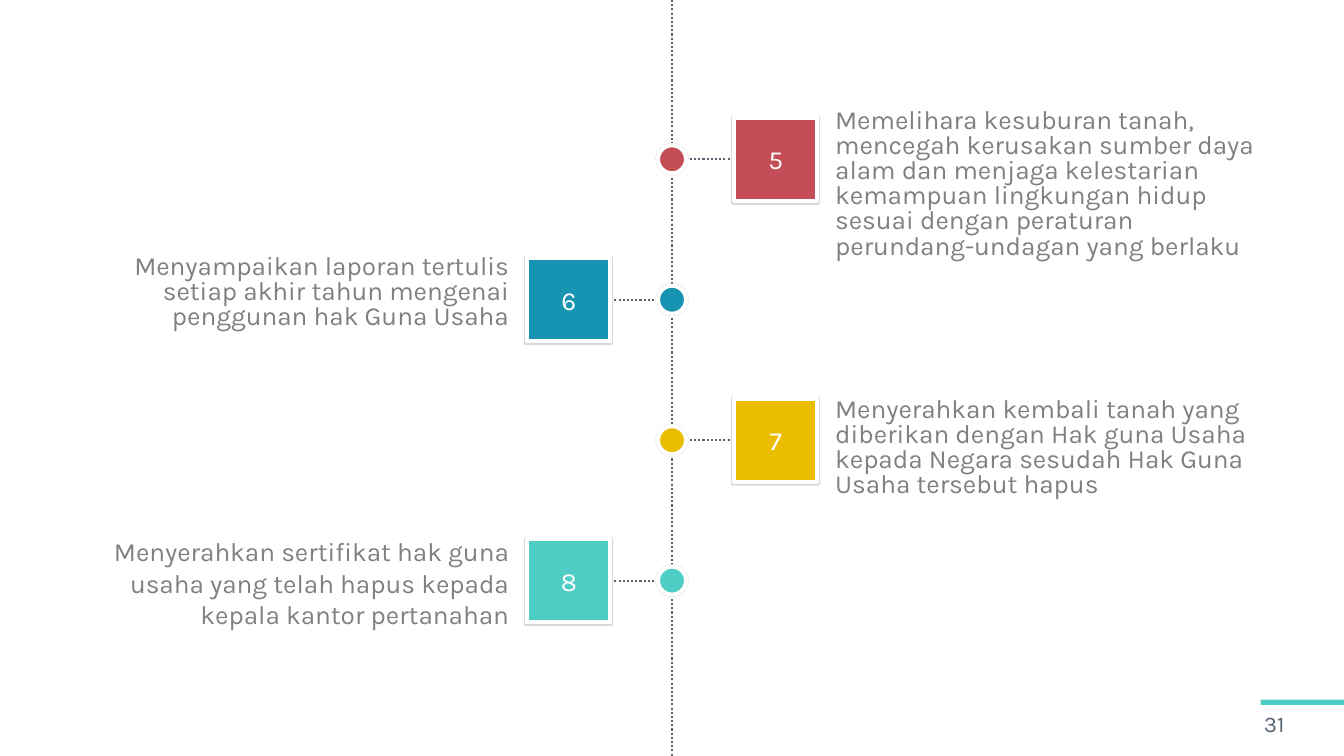
"""Build a timeline slide with duties five to eight of a land-use right holder."""

import dataclasses

import lxml.etree
import pptx
import pptx.dml.color
import pptx.enum.dml
import pptx.enum.shapes
import pptx.enum.text
import pptx.oxml.ns
import pptx.util

COLORS = {
    "red": "C54D57", "blue": "1694B2", "yellow": "EABD00", "teal": "4ECDC4",
    "slate": "556272", "grey": "808080", "white": "FFFFFF", "black": "000000",
}
FONT = "Karla"
SLIDE_WIDTH = pptx.util.Inches(20)
COLUMNS = 20
ROWS = 11.25
CELL = SLIDE_WIDTH / COLUMNS

AXIS = COLUMNS / 2
FIRST_ROW = 2.37
ROW_STEP = 2.09
DOT = 0.42
SQUARE = 1.24
SQUARE_OFFSET = 1.54
TEXT_OFFSET = 2.33

SHAPES = pptx.enum.shapes.MSO_SHAPE
ALIGN = pptx.enum.text.PP_ALIGN
ANCHOR = pptx.enum.text.MSO_ANCHOR


@dataclasses.dataclass(frozen=True)
class Area:
    """A rectangle in grid cells."""

    left: float
    top: float
    width: float
    height: float

    def lengths(self) -> list[int]:
        """Give the rectangle in slide units."""
        return [cells(value) for value in dataclasses.astuple(self)]


@dataclasses.dataclass(frozen=True)
class Duty:
    """One step of the timeline; side is 1 for right and -1 for left."""

    number: str
    text: str
    color: str
    side: int
    top: float
    width: float
    height: float
    spacing: float


DUTIES = [
    Duty("5", "Memelihara kesuburan tanah, mencegah kerusakan sumber daya alam "
         "dan menjaga kelestarian kemampuan lingkungan hidup sesuai dengan "
         "peraturan perundang-undagan yang berlaku",
         "red", 1, 1.58, 6.46, 2.29, 0.8),
    Duty("6", "Menyampaikan laporan tertulis setiap akhir tahun mengenai "
         "penggunan hak Guna Usaha",
         "blue", -1, 3.75, 6.08, 2.79, 0.8),
    Duty("7", "Menyerahkan kembali tanah yang diberikan dengan Hak guna Usaha "
         "kepada Negara sesudah Hak Guna Usaha tersebut hapus",
         "yellow", 1, 5.88, 6.46, 2.63, 0.8),
    Duty("8", "Menyerahkan sertifikat hak guna usaha yang telah hapus kepada "
         "kepala kantor pertanahan",
         "teal", -1, 7.92, 6.08, 2.81, 1.0),
]


def cells(count: float) -> int:
    """Turn a number of grid cells into slide units."""
    return round(count * CELL)


def rgb(name: str) -> pptx.dml.color.RGBColor:
    """Look up a named colour."""
    return pptx.dml.color.RGBColor.from_string(COLORS[name])


def add_effects(shape):
    """Append an effect list to a shape and return it."""
    tag = pptx.oxml.ns.qn("a:effectLst")
    return lxml.etree.SubElement(shape._element.spPr, tag)


def add_dotted_line(page, start: tuple[float, float], end: tuple[float, float]) -> None:
    """Draw a dotted line between two grid points."""
    line = page.shapes.add_connector(
        pptx.enum.shapes.MSO_CONNECTOR.STRAIGHT,
        *[cells(value) for value in (*start, *end)])
    line.line.color.rgb = rgb("slate")
    line.line.width = pptx.util.Pt(2.25)
    line.line.dash_style = pptx.enum.dml.MSO_LINE.ROUND_DOT
    add_effects(line)


def add_block(page, kind, area: Area, color: str):
    """Draw a plain filled shape."""
    shape = page.shapes.add_shape(kind, *area.lengths())
    shape.fill.solid()
    shape.fill.fore_color.rgb = rgb(color)
    shape.line.fill.background()
    shape.shadow.inherit = False
    return shape


def add_marker(page, kind, x: float, y: float, size: float, color: str,
               drop: float) -> None:
    """Draw a white-rimmed shape around a centre, with a faint shadow."""
    shape = add_block(page, kind, Area(x - size / 2, y - size / 2, size, size), color)
    shape.line.color.rgb = rgb("white")
    shape.line.width = pptx.util.Pt(4.5)
    effects = shape._element.spPr.find(pptx.oxml.ns.qn("a:effectLst"))
    shadow = lxml.etree.SubElement(
        effects, pptx.oxml.ns.qn("a:outerShdw"), dist=str(pptx.util.Pt(drop)),
        dir="5400000", sx="102000", sy="102000", algn="ctr", rotWithShape="0")
    tone = lxml.etree.SubElement(
        shadow, pptx.oxml.ns.qn("a:srgbClr"), val=COLORS["black"])
    lxml.etree.SubElement(tone, pptx.oxml.ns.qn("a:alpha"), val="15000")


def add_text(page, area: Area, text: str, size: float, color: str, align,
             anchor=ANCHOR.MIDDLE):
    """Write one paragraph in a wrapped text box and return the box."""
    box = page.shapes.add_textbox(*area.lengths())
    frame = box.text_frame
    frame.word_wrap = True
    frame.vertical_anchor = anchor
    para = frame.paragraphs[0]
    para.alignment = align
    span = para.add_run()
    span.text = text
    span.font.name = FONT
    span.font.size = pptx.util.Pt(size)
    span.font.color.rgb = rgb(color)
    return box


def add_duty(page, duty: Duty, y: float) -> None:
    """Draw the dot, link, numbered square and description of one duty."""
    square_x = AXIS + duty.side * SQUARE_OFFSET
    add_dotted_line(page, (square_x - duty.side * SQUARE / 2, y),
                    (AXIS + duty.side * DOT / 2, y))
    add_marker(page, SHAPES.RECTANGLE, square_x, y, SQUARE, duty.color, 1)
    add_marker(page, SHAPES.OVAL, AXIS, y, DOT, duty.color, 0)
    add_text(page, Area(square_x - 0.64, y - 0.41, 1.29, 0.82),
             duty.number, 28, "white", ALIGN.CENTER)
    on_right = duty.side > 0
    left = AXIS + TEXT_OFFSET if on_right else AXIS - TEXT_OFFSET - duty.width
    box = add_text(page, Area(left, duty.top, duty.width, duty.height),
                   duty.text, 28, "grey",
                   ALIGN.LEFT if on_right else ALIGN.RIGHT, ANCHOR.TOP)
    box.fill.solid()
    box.fill.fore_color.rgb = rgb("white")
    para = box.text_frame.paragraphs[0]
    para.line_spacing = duty.spacing
    para.space_before = pptx.util.Pt(5.8)


def main() -> None:
    """Build and save the deck."""
    deck = pptx.Presentation()
    deck.slide_width = SLIDE_WIDTH
    deck.slide_height = cells(ROWS)
    page = deck.slides.add_slide(deck.slide_layouts.get_by_name("Blank"))
    add_block(page, SHAPES.RECTANGLE, Area(18.76, 10.41, 1.24, 0.08), "teal")
    centres = [FIRST_ROW + index * ROW_STEP for index in range(len(DUTIES))]
    starts = [0] + [y + DOT / 2 for y in centres]
    ends = [y - DOT / 2 for y in centres] + [ROWS]
    for start, end in zip(starts, ends):
        add_dotted_line(page, (AXIS, start), (AXIS, end))
    for duty, y in zip(DUTIES, centres):
        add_duty(page, duty, y)
    add_text(page, Area(18.71, 10.5, 1.29, 0.53), "31", 24, "slate", ALIGN.LEFT)
    deck.save("out.pptx")


if __name__ == "__main__":
    main()
